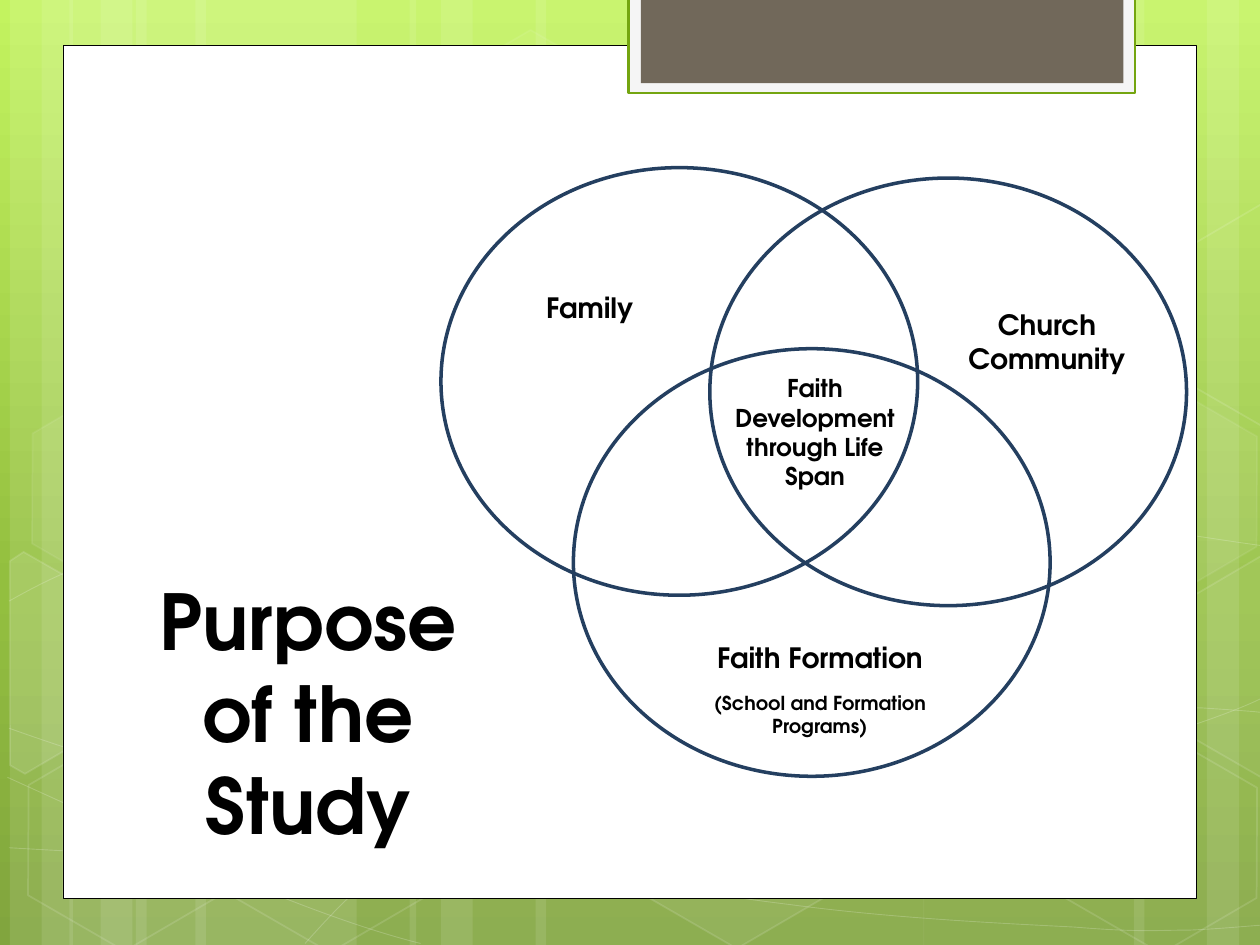
from copy import deepcopy
from dataclasses import dataclass

from lxml import etree
from pptx import Presentation
from pptx.dml.color import RGBColor
from pptx.enum.shapes import MSO_SHAPE
from pptx.enum.text import PP_ALIGN
from pptx.oxml.ns import qn
from pptx.util import Cm, Pt

RECTANGLE, OVAL, HEXAGON = MSO_SHAPE.RECTANGLE, MSO_SHAPE.OVAL, MSO_SHAPE.HEXAGON
CENTER = PP_ALIGN.CENTER


@dataclass(frozen=True)
class Theme:
    font: str = "TeX Gyre Adventor"
    sky: tuple = ((0, "C3F35F"), (0.62, "93BF3F"), (1, "81A53E"))
    white: str = "FFFFFF"
    black: str = "000000"
    tab: str = "F5F5F5"
    tab_edge: str = "74A510"
    tab_core: str = "71685A"
    ring: str = "243F60"
    title: int = 44
    label: int = 16
    center: int = 14
    note: int = 11


theme = Theme()


def paint(shape, fill=None, line=None, width=1, fill_alpha=100, line_alpha=100):
    """Set fill and line; alphas are opacity in percent."""
    shape.shadow.inherit = False
    for target, color in ((shape.fill, fill), (shape.line.fill, line)):
        if color is None:
            target.background()
        else:
            target.solid()
            target.fore_color.rgb = RGBColor.from_string(color)
    if line:
        shape.line.width = Pt(width)
    properties = shape._element.spPr
    for place, alpha in (("a:solidFill", fill_alpha), ("a:ln/a:solidFill", line_alpha)):
        solid = properties.find(place, {"a": properties.nsmap["a"]})
        if solid is not None and alpha < 100:
            etree.SubElement(solid[0], qn("a:alpha")).set("val", str(alpha * 1000))


def outline(points, close):
    """Add a freeform through points given in centimetres."""
    corners = [(Cm(x), Cm(y)) for x, y in points]
    builder = page.shapes.build_freeform(*corners[0])
    builder.add_line_segments(corners[1:], close=close)
    return builder.convert_to_shape()


deck = Presentation()
deck.slide_width, deck.slide_height = Cm(25.4), Cm(19.05)
page = deck.slides.add_slide(deck.slide_layouts[6])

# Background gradient
sky = page.background.fill
sky.gradient()
sky.gradient_angle = 270
stop_list = page._element.find(".//" + qn("a:gsLst"))
stop_list.append(deepcopy(stop_list[-1]))
for stop, (position, color) in zip(sky.gradient_stops, theme.sky):
    stop.position = position
    stop.color.rgb = RGBColor.from_string(color)

# Light stripes: left, width
stripes = [
    (2.74, 4.45), (0.2, 1.27), (0.84, 2.12), (3.94, 4.45), (1.4, 1.27), (2.03, 2.12),
    (18.62, 4.45), (24.33, 1.27), (22.86, 2.12), (10.8, 7.83), (8.26, 1.27), (8.89, 2.12),
]
for left, width in stripes:
    stripe = page.shapes.add_shape(RECTANGLE, Cm(left), 0, Cm(width), deck.slide_height)
    paint(stripe, theme.white, fill_alpha=10)

# Thin waves: a start point, then three Bezier points for each section
waves = [
    [(0.18, 17.09), (1.55, 17.17), (2.92, 17.25), (4.83, 17.22), (6.73, 17.2),
     (9.09, 17.15), (11.63, 16.89), (14.17, 16.64), (17.78, 16.15), (20.12, 15.67),
     (22.43, 15.19), (24.82, 14.43), (25.58, 14)],
    [(0.18, 12.12), (0.91, 11.71), (1.65, 11.33), (3.07, 10.95), (4.52, 10.57),
     (6.58, 10.01), (8.81, 9.83), (11.07, 9.65), (13.82, 9.63), (16.61, 9.83),
     (19.41, 10.03), (24.05, 10.82), (25.58, 11.02)],
    [(0.15, 15.67), (3.23, 17.07), (6.27, 18.47), (8.48, 19.02)],
    [(0.18, 14.68), (0.97, 14.96), (1.78, 15.24), (3.25, 15.65), (4.72, 16.03),
     (6.93, 16.66), (9.07, 17.09), (11.18, 17.53), (13.84, 17.98), (15.95, 18.24),
     (18.06, 18.52), (20.32, 18.62), (21.67, 18.69), (22.99, 18.8), (23.34, 18.75),
     (24, 18.75), (24.66, 18.72), (25.12, 18.67), (25.58, 18.64)],
    [(6.15, 19.02), (6.6, 18.52), (7.06, 18.01), (7.67, 17.55), (8.31, 17.09),
     (9.14, 16.59), (9.86, 16.23), (10.57, 15.88), (11, 15.72), (11.94, 15.47),
     (12.85, 15.21), (14.55, 14.86), (15.44, 14.68), (16.36, 14.5), (16.48, 14.5),
     (17.27, 14.45), (18.06, 14.38), (19.3, 14.3), (20.17, 14.27), (21.06, 14.25),
     (22.5, 14.27), (22.5, 14.27), (23.07, 14.27), (23.64, 14.27), (24.21, 14.27),
     (24.66, 14.3), (25.1, 14.33), (25.32, 14.35), (25.55, 14.38), (25.48, 14.35),
     (25.55, 14.38)],
]
for points in waves:
    wave = outline(points, False)
    segments = list(wave._element.iter(qn("a:lnTo")))
    for first in range(0, len(segments), 3):
        curve, *others = segments[first:first + 3]
        curve.tag = qn("a:cubicBezTo")
        for other in others:
            curve.append(other[0])
            other.getparent().remove(other)
    paint(wave, line=theme.white, width=0.5, line_alpha=20)

# Faint hexagons: left, top, fill opacity, line opacity
hexagons = [
    (8.48, 0.91, 4, 8), (12.62, 14.96, 6, 12), (0.28, 15.01, 0, 12), (0.36, 7.92, 7, 8),
    (4.42, 15.04, 0, 12), (19.13, 11.51, 10, 12), (21.18, 15.06, 0, 12), (21.18, 7.98, 7, 8),
]
for left, top, fill_alpha, line_alpha in hexagons:
    hexagon = page.shapes.add_shape(HEXAGON, Cm(left), Cm(top), Cm(4.45), Cm(3.86))
    hexagon.adjustments[0] = 0.285
    hexagon.rotation = 30
    paint(hexagon, theme.white if fill_alpha else None, theme.white, 1, fill_alpha, line_alpha)

# Hexagons cut off at the slide edges: corners around a centre, before turning
left_cut = [(-1.76, -1.62), (-1.61, -1.92), (0.65, -1.93), (1.74, 0.02), (0.65, 1.94),
            (0.3, 1.94)]
right_cut = [(-1.74, -0.02), (-0.65, -1.94), (-0.41, -1.93), (1.71, 1.74), (1.6, 1.92),
             (-0.62, 1.92)]
cuts = [(left_cut, 0.91, 13.59, 10), (right_cut, 25.02, 13.21, 4), (right_cut, 25.02, 6.12, 0)]
for corners, center_x, center_y, fill_alpha in cuts:
    cut = outline([(center_x + x, center_y + y) for x, y in corners], True)
    cut.rotation = 30
    paint(cut, theme.white if fill_alpha else None, theme.white, 1, fill_alpha, 12)

# White panel, hanging tab and the three rings
figures = [
    (RECTANGLE, 1.27, 0.91, 22.86, 17.2, theme.white, theme.black, 0.5),
    (RECTANGLE, 12.67, -0.05, 10.21, 1.93, theme.tab, theme.tab_edge, 1.25),
    (RECTANGLE, 12.92, -0.05, 9.73, 1.73, theme.tab_core, None, 0),
]
for left, top in ((11.56, 7.03), (8.89, 3.38), (14.31, 3.59)):
    figures.append((OVAL, left, top, 9.61, 8.62, None, theme.ring, 2))
for kind, left, top, width, height, fill, line, weight in figures:
    figure = page.shapes.add_shape(kind, Cm(left), Cm(top), Cm(width), Cm(height))
    paint(figure, fill, line, weight)

# Texts: left, top, width, height, space after, then paragraphs with their size
texts = [
    (10.19, 5.73, 3.4, 1.27, 10, [("Family", theme.label)]),
    (18.88, 6.08, 4.45, 2.03, 10, [("Church Community", theme.label)]),
    (13.75, 12.78, 5.56, 2.74, 10, [("Faith Formation", theme.label),
                                    ("(School and Formation Programs)", theme.note)]),
    (14.54, 7.4, 3.78, 3.18, 10, [("Faith Development through Life Span", theme.center)]),
    (2.53, 11.43, 7.37, 5.89, 0, [("Purpose of the Study", theme.title)]),
]
for left, top, width, height, space_after, lines in texts:
    box = page.shapes.add_textbox(Cm(left), Cm(top), Cm(width), Cm(height))
    frame = box.text_frame
    frame.word_wrap = True
    for index, (words, size) in enumerate(lines):
        para = frame.add_paragraph() if index else frame.paragraphs[0]
        para.alignment = CENTER
        para.space_after = Pt(space_after)
        span = para.add_run()
        span.text = words
        span.font.name = theme.font
        span.font.size = Pt(size)
        span.font.bold = True
        span.font.color.rgb = RGBColor.from_string(theme.black)

deck.save("out.pptx")
